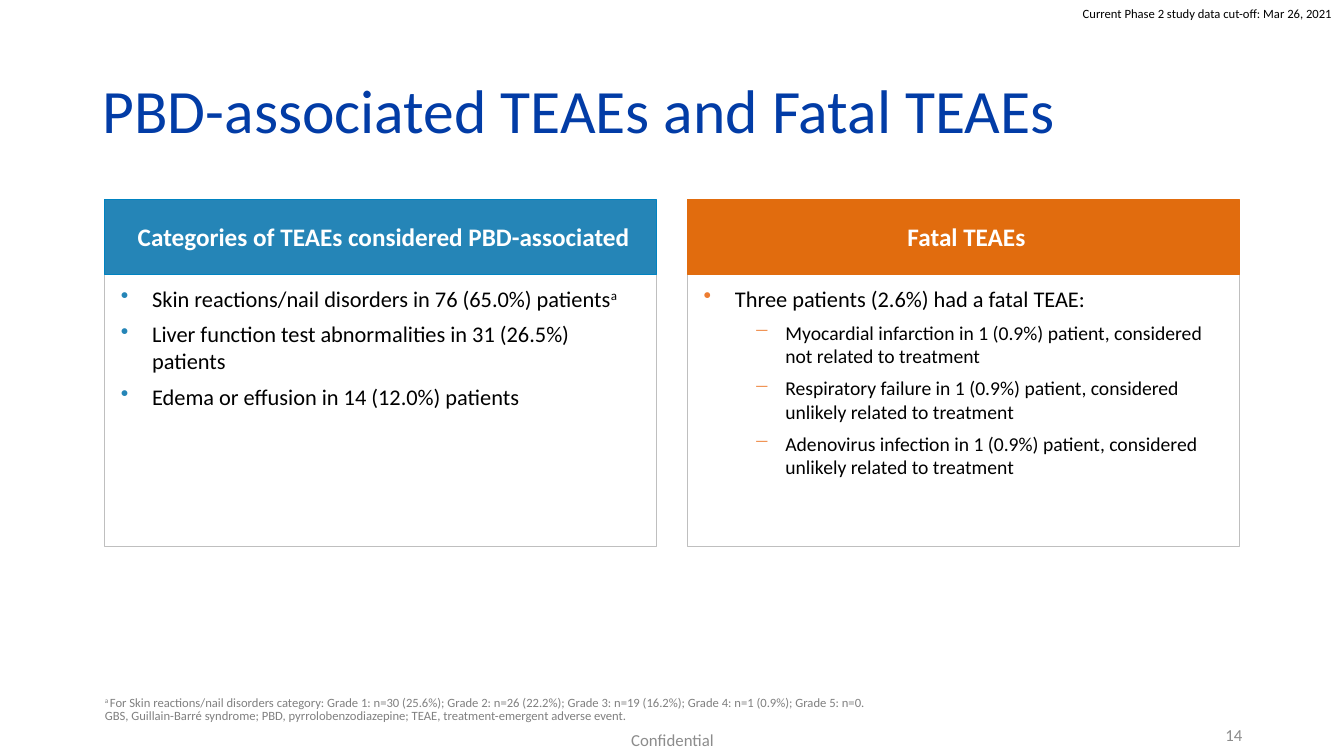
from lxml import etree
from pptx import Presentation
from pptx import util as u
from pptx.dml.color import RGBColor
from pptx.enum import shapes, text
from pptx.oxml import ns

TOP, MID, LOW = text.MSO_ANCHOR.TOP, text.MSO_ANCHOR.MIDDLE, text.MSO_ANCHOR.BOTTOM
LEFT, CENTER, RIGHT = text.PP_ALIGN.LEFT, text.PP_ALIGN.CENTER, text.PP_ALIGN.RIGHT
PAD = (0.1, 0.05, 0.1, 0.05)


def tint(color, code):
    color.rgb = RGBColor.from_string(code)


def write(shape, line, size, code, anchor=TOP, pad=PAD, first=True, bold=False, **form):
    """Add one paragraph; text between ^ marks is superscript, a newline breaks."""
    frame = shape.text_frame
    if first:
        frame.word_wrap = True
        frame.vertical_anchor = anchor
        for side, gap in zip(("left", "top", "right", "bottom"), pad):
            setattr(frame, "margin_" + side, u.Inches(gap))
    para = frame.paragraphs[0] if first else frame.add_paragraph()
    for name, value in form.items():
        setattr(para, name, value)
    for i, part in enumerate(line.split("^")):
        for j, piece in enumerate(part.split("\n")):
            if j:
                para.add_line_break()
            if not piece:
                continue
            run = para.add_run()
            run.text = piece
            for name, value in {"name": "Calibri", "size": u.Pt(size), "bold": bold}.items():
                setattr(run.font, name, value)
            tint(run.font.color, code)
            if i % 2:
                run._r.get_or_add_rPr().set("baseline", "30000")
    return para


deck = Presentation()
deck.slide_width, deck.slide_height = u.Inches(13.33), u.Inches(7.5)
slide = deck.slides.add_slide(deck.slide_layouts[6])

# Title, cut-off date, footer, page number and footnote
note = ("^a ^For Skin reactions/nail disorders category: Grade 1: n=30 (25.6%); "
        "Grade 2: n=26 (22.2%); Grade 3: n=19 (16.2%); Grade 4: n=1 (0.9%); Grade 5: n=0. \n"
        "GBS, Guillain-Barré syndrome; PBD, pyrrolobenzodiazepine; "
        "TEAE, treatment-emergent adverse event.")
labels = [
    ((5.17, 7.09, 3, 0.4), "Confidential", 12, "8C8C8C", LOW, PAD, CENTER, 1),
    ((10.64, 0.01, 2.67, 0.25), "Current Phase 2 study data cut-off: Mar 26, 2021",
     9, "000000", TOP, PAD, LEFT, 1),
    ((0.92, 0.4, 11.5, 1.45), "PBD-associated TEAEs and Fatal TEAEs",
     44, "023CA6", MID, PAD, LEFT, 0.9),
    ((9.42, 7.09, 3, 0.4), "14", 12, "8C8C8C", MID, PAD, RIGHT, 1),
    ((1.04, 6.63, 11.26, 0.55), note, 9, "808080", LOW, (0, 0, 0, 0), LEFT, 0.9),
]
for box, line, size, code, anchor, pad, align, space in labels:
    label = slide.shapes.add_textbox(*map(u.Inches, box))
    write(label, line, size, code, anchor, pad, alignment=align, line_spacing=space)

# Two cards: heading, heading fill, heading edge, bullet colour, (level, line) items
cards = [
    ("Categories of TEAEs considered PBD-associated", "2585B7", "0083C1", "2585B7", [
        (0, "Skin reactions/nail disorders in 76 (65.0%) patients^a^"),
        (0, "Liver function test abnormalities in 31 (26.5%) patients"),
        (0, "Edema or effusion in 14 (12.0%) patients")]),
    ("Fatal TEAEs", "E16C0E", "E16C0E", "ED7D31", [
        (0, "Three patients (2.6%) had a fatal TEAE:"),
        (1, "Myocardial infarction in 1 (0.9%) patient, considered not related to treatment"),
        (1, "Respiratory failure in 1 (0.9%) patient, considered unlikely related to treatment"),
        (1, "Adenovirus infection in 1 (0.9%) patient, considered unlikely related to treatment")]),
]
for col, (head, fill, edge, dot, items) in enumerate(cards):
    left = 1.04 + 5.78 * col
    parts = []
    for top, high, back, rim in ((2.67, 2.75, "FFFFFF", "BFBFBF"), (1.98, 0.74, fill, edge)):
        rect = slide.shapes.add_shape(shapes.MSO_SHAPE.RECTANGLE,
                                      *map(u.Inches, (left, top, 5.47, high)))
        rect.shadow.inherit = False
        rect.fill.solid()
        tint(rect.fill.fore_color, back)
        tint(rect.line.color, rim)
        rect.line.width = u.Pt(0.75)
        parts.append(rect)
    body, band = parts
    write(band, head, 18, "FFFFFF", MID, (0.16, 0.05, 0.1, 0.05), bold=True,
          alignment=CENTER, space_after=u.Pt(6))

    # Bulleted items
    for row, (level, line) in enumerate(items):
        para = write(body, line, 16 - 2 * level, "000000", TOP, (0.16, 0.16, 0.16, 0.08),
                     row == 0, alignment=LEFT, level=level, space_after=u.Pt(6))
        prop = para._p.get_or_add_pPr()
        prop.set("marL", str(u.Inches(0.31 + 0.5 * level)))
        prop.set("indent", str(u.Inches(-0.31)))
        hue = etree.SubElement(prop, ns.qn("a:buClr"))
        etree.SubElement(hue, ns.qn("a:srgbClr")).set("val", dot)
        etree.SubElement(prop, ns.qn("a:buChar")).set("char", "•─"[level])

deck.save("out.pptx")
